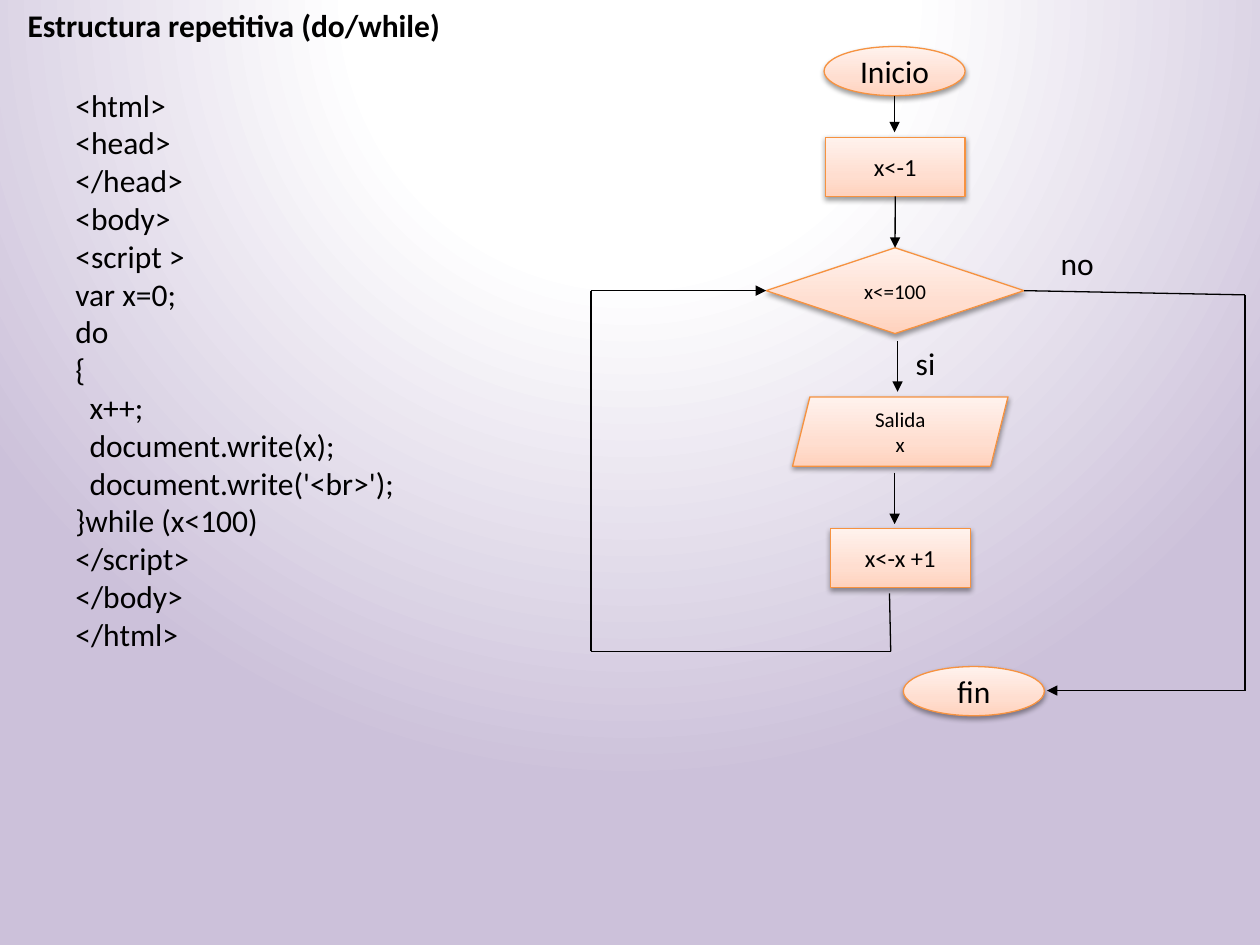
from dataclasses import dataclass
from typing import Any, Optional

import lxml.etree
import pptx
import pptx.dml.color
import pptx.enum.shapes
import pptx.enum.text
import pptx.oxml.ns
import pptx.util

Pt = pptx.util.Pt
qn = pptx.oxml.ns.qn
Shapes = pptx.enum.shapes.MSO_SHAPE
Align = pptx.enum.text.PP_ALIGN
Anchor = pptx.enum.text.MSO_ANCHOR
AutoSize = pptx.enum.text.MSO_AUTO_SIZE

INK = "000000"
ORANGE = "F69240"
PEACH_STOPS = [(0, "FFD2BD"), (35, "FFDED0"), (100, "FFF2ED")]
LILAC_STOPS = [(0, "FFFFFF"), (35, "FFFFFF"), (100, "CCC1DA")]
TOP, LEFT, BOTTOM, RIGHT = range(4)
CODE_INDENT = 8.1


@dataclass
class Box:
    left: float
    top: float
    width: float
    height: float


@dataclass
class Step:
    form: Any
    box: Box
    lines: list[str]
    size: float


@dataclass
class Joint:
    step: str
    side: int


@dataclass
class Flow:
    points: list[tuple[float, float]]
    start: Optional[Joint] = None
    end: Optional[Joint] = None
    arrow: bool = True


@dataclass
class Note:
    box: Box
    lines: list[str]


STEPS = {
    "start": Step(Shapes.OVAL, Box(470.9, 26.6, 80.6, 28.1), ["Inicio"], 18),
    "assign": Step(Shapes.RECTANGLE, Box(471.6, 78.5, 79.9, 33.8), ["x<-1"], 14),
    "test": Step(Shapes.DIAMOND, Box(437.8, 141.6, 147.4, 49), ["x<=100"], 12),
    "output": Step(Shapes.PARALLELOGRAM, Box(452.9, 226.8, 123.1, 39.6), ["Salida", "x"], 12),
    "increment": Step(Shapes.RECTANGLE, Box(474.5, 302.1, 79.9, 33.8), ["x<-x +1"], 14),
    "end": Step(Shapes.OVAL, Box(516.2, 380.9, 80.6, 28.1), ["fin"], 18),
}
FLOWS = [
    Flow([(511.2, 54.7), (511.2, 75.6)]),
    Flow([(511.5, 112.3), (511.5, 141.6)], Joint("assign", BOTTOM), Joint("test", TOP)),
    Flow([(512.9, 195.1), (512.9, 223.9)]),
    Flow([(511.2, 270), (511.2, 299.5)]),
    Flow([(508.3, 339.1), (509, 372.2), (337.7, 372.2), (337.7, 166.1), (437.8, 166.1)],
         end=Joint("test", LEFT)),
    Flow([(585.2, 166.1), (711.4, 168.5), (711.4, 394.6), (598.3, 394.6)],
         start=Joint("test", RIGHT)),
]
CODE = Note(Box(36, 45.4, 214.6, 334), [
    "<html>", "<head>", "</head>", "<body>", "<script >", "var x=0;", "do", "{",
    "\tx++;", "\tdocument.write(x);", "\tdocument.write('<br>');",
    "}while (x<100)", "</script>", "</body>", "</html>",
])
BRANCHES = [
    Note(Box(516.2, 193, 28.1, 28.8), ["si"]),
    Note(Box(599, 136.1, 40.3, 28.8), ["no"]),
]


def color(value: str) -> pptx.dml.color.RGBColor:
    return pptx.dml.color.RGBColor.from_string(value)


def add_child(parent: Any, tag: str, **attributes: Any) -> Any:
    return lxml.etree.SubElement(
        parent, qn(tag), {key: str(value) for key, value in attributes.items()})


def set_stops(gradient: Any, stops: list[tuple[int, str]]) -> None:
    for child in list(gradient):
        gradient.remove(child)
    stop_list = add_child(gradient, "a:gsLst")
    for position, value in stops:
        stop = add_child(stop_list, "a:gs", pos=position * 1000)
        add_child(stop, "a:srgbClr", val=value)


def paint_background(slide: Any) -> None:
    slide.background.fill.gradient()
    gradient = next(slide._element.iter(qn("a:gradFill")))
    set_stops(gradient, LILAC_STOPS)
    circle = add_child(gradient, "a:path", path="circle")
    add_child(circle, "a:fillToRect", l=50000, t=-80000, r=50000, b=180000)


def write(frame: Any, lines: list[str], size: float, align: Any = Align.LEFT,
          bold: bool = False) -> None:
    for number, line in enumerate(lines):
        paragraph = frame.paragraphs[0] if number == 0 else frame.add_paragraph()
        paragraph.alignment = align
        if line.startswith("\t"):
            properties = paragraph._p.get_or_add_pPr()
            properties.set("marL", str(Pt(CODE_INDENT)))
            properties.set("indent", "0")
        run = paragraph.add_run()
        run.text = line.strip()
        run.font.name = "Calibri"
        run.font.size = Pt(size)
        run.font.bold = bold
        run.font.color.rgb = color(INK)


def place(box: Box) -> tuple[int, int, int, int]:
    return Pt(box.left), Pt(box.top), Pt(box.width), Pt(box.height)


def draw_step(slide: Any, step: Step) -> Any:
    shape = slide.shapes.add_shape(step.form, *place(step.box))
    properties = shape._element.spPr
    shape.fill.gradient()
    gradient = properties.find(qn("a:gradFill"))
    set_stops(gradient, PEACH_STOPS)
    add_child(gradient, "a:lin", ang=270 * 60000, scaled=0)
    shape.line.color.rgb = color(ORANGE)
    shape.line.width = Pt(0.75)
    shape.shadow.inherit = False
    shadow = add_child(properties.find(qn("a:effectLst")), "a:outerShdw",
                       blurRad=Pt(3.1), dist=Pt(1.6), dir=90 * 60000, rotWithShape=0)
    add_child(add_child(shadow, "a:srgbClr", val=INK), "a:alpha", val=38000)
    shape.text_frame.vertical_anchor = Anchor.MIDDLE
    write(shape.text_frame, step.lines, step.size, Align.CENTER)
    return shape


def draw_flow(slide: Any, flow: Flow, drawn: dict[str, Any]) -> None:
    last = len(flow.points) - 2
    for number, (begin, finish) in enumerate(zip(flow.points, flow.points[1:])):
        segment = slide.shapes.add_connector(
            pptx.enum.shapes.MSO_CONNECTOR.STRAIGHT, *map(Pt, begin + finish))
        segment.line.color.rgb = color(INK)
        segment.line.width = Pt(0.75)
        properties = segment._element.spPr
        if flow.arrow and number == last:
            add_child(properties.find(qn("a:ln")), "a:tailEnd", type="triangle")
        add_child(properties, "a:effectLst")
        if flow.start and number == 0:
            segment.begin_connect(drawn[flow.start.step], flow.start.side)
        if flow.end and number == last:
            segment.end_connect(drawn[flow.end.step], flow.end.side)


def draw_note(slide: Any, note: Note) -> None:
    frame = slide.shapes.add_textbox(*place(note.box)).text_frame
    frame.word_wrap = True
    frame.auto_size = AutoSize.SHAPE_TO_FIT_TEXT
    write(frame, note.lines, 18)


def draw_title(slide: Any) -> None:
    title = slide.shapes.title
    title.left, title.top, title.width, title.height = place(Box(8.6, 0, 252, 28.8))
    frame = title.text_frame
    frame.word_wrap = False
    frame.auto_size = AutoSize.SHAPE_TO_FIT_TEXT
    frame.vertical_anchor = Anchor.TOP
    write(frame, ["Estructura repetitiva (do/while)"], 18, bold=True)


def main() -> None:
    deck = pptx.Presentation()
    deck.slide_width, deck.slide_height = Pt(720), Pt(540)
    slide = deck.slides.add_slide(deck.slide_layouts.get_by_name("Title Only"))
    paint_background(slide)
    draw_title(slide)
    draw_note(slide, CODE)
    drawn = {name: draw_step(slide, step) for name, step in STEPS.items()}
    for flow in FLOWS:
        draw_flow(slide, flow, drawn)
    for branch in BRANCHES:
        draw_note(slide, branch)
    deck.save("out.pptx")


if __name__ == "__main__":
    main()
